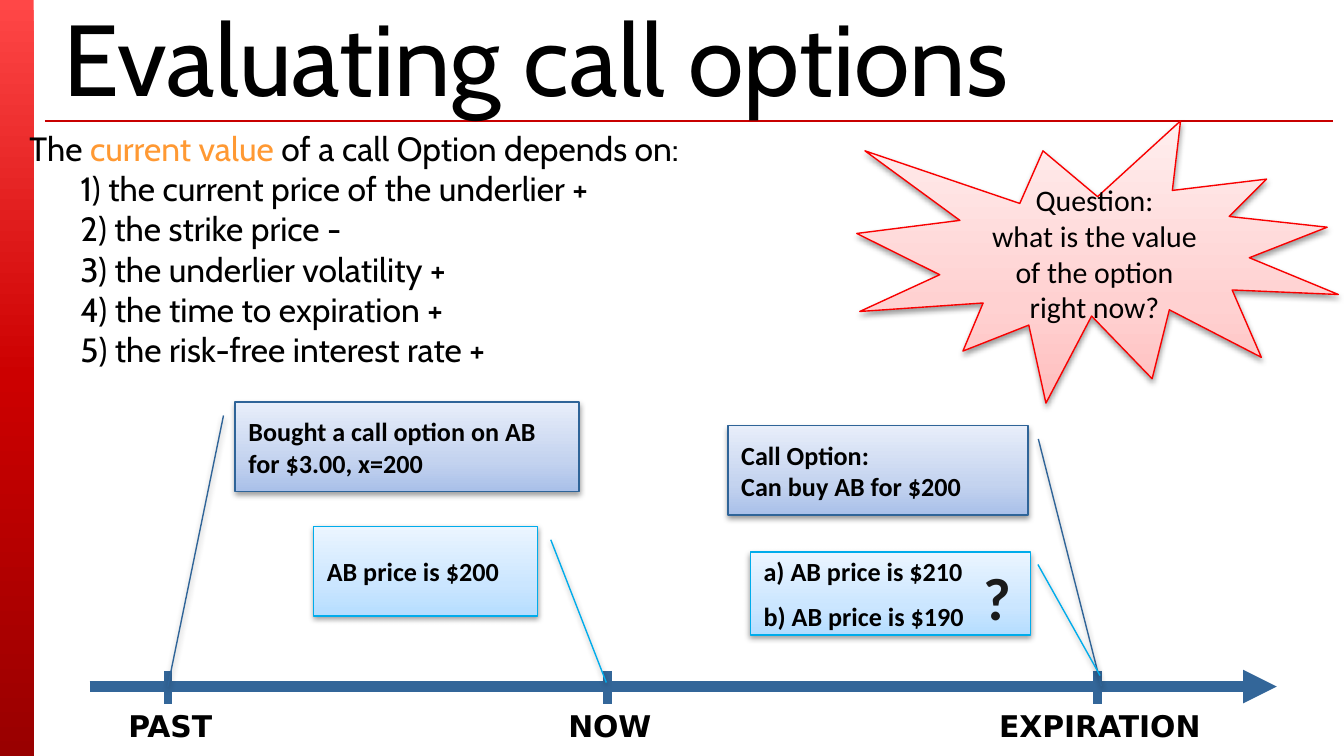
from copy import deepcopy

from lxml import etree
from pptx import Presentation
from pptx import util as u
from pptx.dml import color
from pptx.enum import shapes, text
from pptx.oxml import ns

# Grid: 120 columns by 67.5 rows of square cells
CELL = u.Inches(10) // 120
COLUMNS, ROWS = 120, 67.5
RULE_ROW, AXIS_ROW = 10.8, 61.3

NAVY = ("2F6498", ("A9C0E9", "C4D3EF", "E8EEFA"))
SKY = ("00ACEB", ("B5DDFF", "CBE6FF", "EBF5FF"))
ROSE = ("F90000", ("FFBDBD", "FFD1D1", "FFEEEE"))

MILESTONES = [("PAST", 15), ("NOW", 54.25), ("EXPIRATION", 98)]

# Box, palette, callout adjustments, paragraphs
CALLOUTS = [
    ((28, 47, 20, 8), SKY, (0.15, 1.059, 1.744, 1.307),
     ["AB price is $200"]),
    ((65, 38, 26.8, 8), NAVY, (0.15, 1.034, 2.908, 1.244),
     ["Call Option:\nCan buy AB for $200"]),
    ((21, 35.9, 30.7, 8), NAVY, (0.15, -0.034, 3.177, -0.196),
     ["Bought a call option on AB for $3.00, x=200"]),
    ((67, 49.3, 25, 7.4), SKY, (0.15, 1.027, 1.49, 1.249),
     ["a) AB price is $210", "b) AB price is $190"]),
]

FACTORS = """
1) the current price of the underlier +
2) the strike price -
3) the underlier volatility +
4) the time to expiration +
5) the risk-free interest rate +"""


def cells(*counts):
    return [u.Emu(round(count * CELL)) for count in counts]


def rgb(code):
    return color.RGBColor.from_string(code)


def add_run(paragraph, words, size, font, shade="000000", bold=False):
    """Add words as runs, with a line break at each newline."""
    for number, line in enumerate(words.split("\n")):
        if number:
            paragraph.add_line_break()
        if line:
            run = paragraph.add_run()
            run.text = line
            run.font.size, run.font.name = u.Pt(size), font
            run.font.bold = bold
            run.font.color.rgb = rgb(shade)


def set_frame(shape, anchor=text.MSO_ANCHOR.MIDDLE, inset=0.1, wrap=True):
    frame = shape.text_frame
    frame.word_wrap, frame.vertical_anchor = wrap, anchor
    frame.margin_left = frame.margin_right = u.Inches(inset)
    frame.margin_top = frame.margin_bottom = u.Inches(inset)
    return frame


def add_text(slide, box, **frame_options):
    return set_frame(slide.shapes.add_textbox(*cells(*box)), **frame_options)


def set_gradient(shape, shades, middle, angle):
    shape.fill.gradient()
    shape.fill.gradient_angle = angle
    stops = shape.fill._fill._gradFill.find(ns.qn("a:gsLst"))
    stops.insert(1, deepcopy(stops[0]))
    for stop, shade, place in zip(shape.fill.gradient_stops, shades, (0, middle, 1)):
        for tint in list(stop._gs[0]):
            stop._gs[0].remove(tint)
        stop.color.rgb = rgb(shade)
        stop.position = place


def add_soft_shadow(shape):
    shape.shadow.inherit = False
    effects = shape._element.spPr.find(ns.qn("a:effectLst"))
    outer = etree.SubElement(effects, ns.qn("a:outerShdw"), blurRad="39370",
                             dist="20000", dir="5400000", rotWithShape="0")
    shade = etree.SubElement(outer, ns.qn("a:srgbClr"), val="000000")
    etree.SubElement(shade, ns.qn("a:alpha"), val="38000")


def add_panel(slide, kind, box, palette):
    """Add a gradient shape with a thin outline and a soft shadow."""
    outline, shades = palette
    panel = slide.shapes.add_shape(kind, *cells(*box))
    set_gradient(panel, shades, 0.35, 90)
    panel.line.color.rgb, panel.line.width = rgb(outline), u.Pt(0.75)
    add_soft_shadow(panel)
    return panel


def add_line(slide, ends, shade, width, arrow=False):
    line = slide.shapes.add_connector(shapes.MSO_CONNECTOR.STRAIGHT, *cells(*ends))
    line.line.color.rgb, line.line.width = rgb(shade), u.Pt(width)
    if arrow:
        etree.SubElement(line.line._get_or_add_ln(), ns.qn("a:tailEnd"), type="triangle")
    etree.SubElement(line._element.spPr, ns.qn("a:effectLst"))


def add_callout(slide, box, palette, adjustments, paragraphs):
    callout = add_panel(slide, shapes.MSO_SHAPE.LINE_CALLOUT_1, box, palette)
    for index, value in enumerate(adjustments):
        callout.adjustments[index] = value
    frame = set_frame(callout)
    for number, words in enumerate(paragraphs):
        paragraph = frame.add_paragraph() if number else frame.paragraphs[0]
        paragraph.alignment = text.PP_ALIGN.LEFT
        paragraph.space_before = u.Pt(7 if number else 0)
        add_run(paragraph, words, 14, "Calibri", bold=True)


def add_milestone(slide, label, column):
    add_line(slide, (column, AXIS_ROW - 1.4, column, AXIS_ROW + 1.6), "336699", 4.5)
    frame = add_text(slide, (column - 10.8, 62, 22, 5.6),
                     anchor=text.MSO_ANCHOR.TOP, wrap=False)
    frame.paragraphs[0].alignment = text.PP_ALIGN.CENTER
    add_run(frame.paragraphs[0], label, 16, "DejaVu Sans", bold=True)


def add_header(slide):
    sidebar = slide.shapes.add_shape(shapes.MSO_SHAPE.RECTANGLE, *cells(0, 0, 3, ROWS))
    set_gradient(sidebar, ("FF4747", "CC0000", "990000"), 0.5, 270)
    sidebar.line.fill.background()
    sidebar.shadow.inherit = False
    add_line(slide, (4, RULE_ROW, 119, RULE_ROW), "C80000", 0.75)
    title = add_text(slide, (4.5, 1.8, 115, 6.4))
    add_run(title.paragraphs[0], "Evaluating call options", 54, "Cabin")


def add_factors(slide):
    frame = add_text(slide, (0, RULE_ROW, 99, 23.3), anchor=text.MSO_ANCHOR.TOP)
    frame.margin_top = u.Inches(0.05)
    paragraph = frame.paragraphs[0]
    indents = paragraph._p.get_or_add_pPr()
    indents.set("marL", str(u.Inches(0.5)))
    indents.set("indent", str(-u.Inches(0.38)))
    add_run(paragraph, "The ", 18, "Cabin")
    add_run(paragraph, "current value ", 18, "Cabin", "FF9933")
    add_run(paragraph, "of a call Option depends on:" + FACTORS, 18, "Cabin")


def add_question(slide):
    burst = add_panel(slide, shapes.MSO_SHAPE.EXPLOSION1, (76.5, RULE_ROW, 43, 25.2), ROSE)
    question = set_frame(burst, wrap=False).paragraphs[0]
    question.alignment = text.PP_ALIGN.CENTER
    add_run(question, "Question:\nwhat is the value\nof the option\nright now?", 16, "Calibri")


def main():
    deck = Presentation()
    deck.slide_width, deck.slide_height = cells(COLUMNS, ROWS)
    slide = deck.slides.add_slide(deck.slide_layouts[6])

    # Heading and value drivers
    add_header(slide)
    add_factors(slide)

    # Timeline
    add_line(slide, (8, AXIS_ROW, 114, AXIS_ROW), "336699", 6, arrow=True)
    for label, column in MILESTONES:
        add_milestone(slide, label, column)

    # Events and the open question
    for callout in CALLOUTS:
        add_callout(slide, *callout)
    add_question(slide)
    unknown = add_text(slide, (87.2, 50, 3.8, 6.5), inset=0).paragraphs[0]
    unknown.alignment = text.PP_ALIGN.CENTER
    add_run(unknown, "?", 32, "Calibri", "1A1A1A", bold=True)

    deck.save("out.pptx")


if __name__ == "__main__":
    main()
